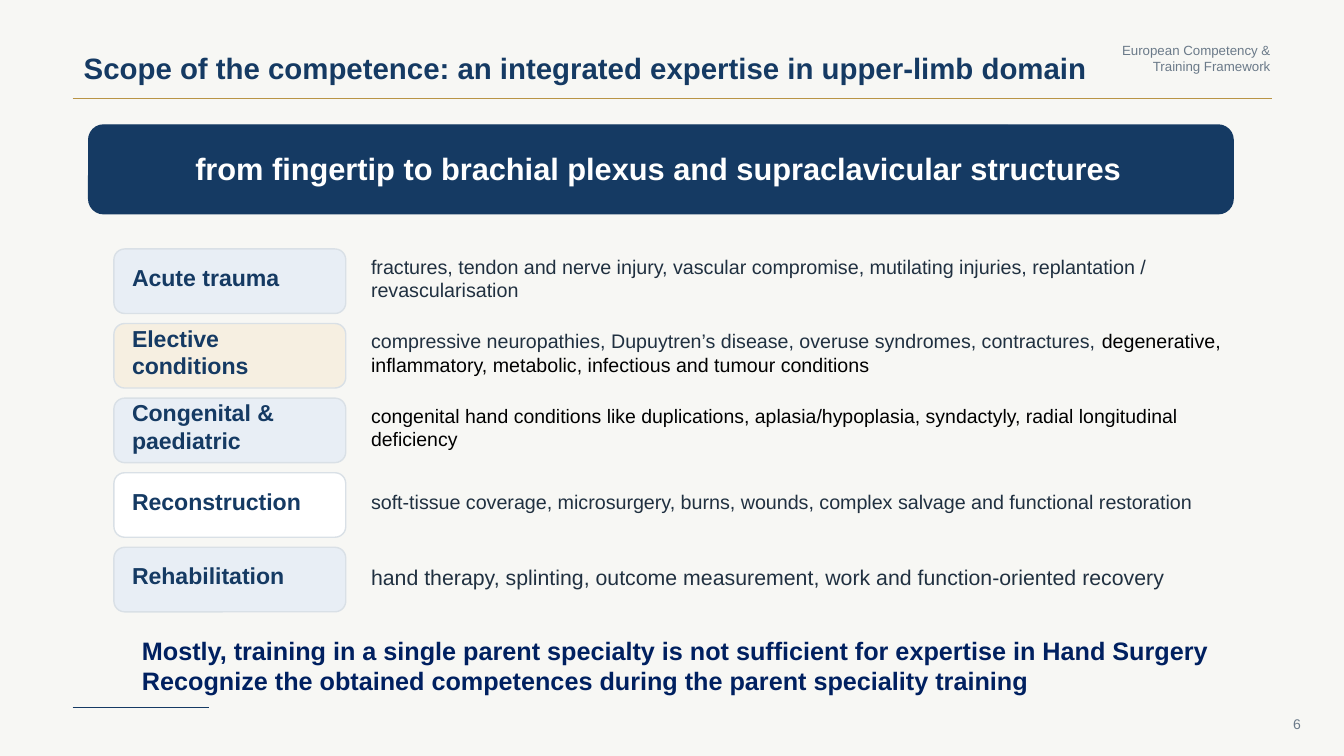
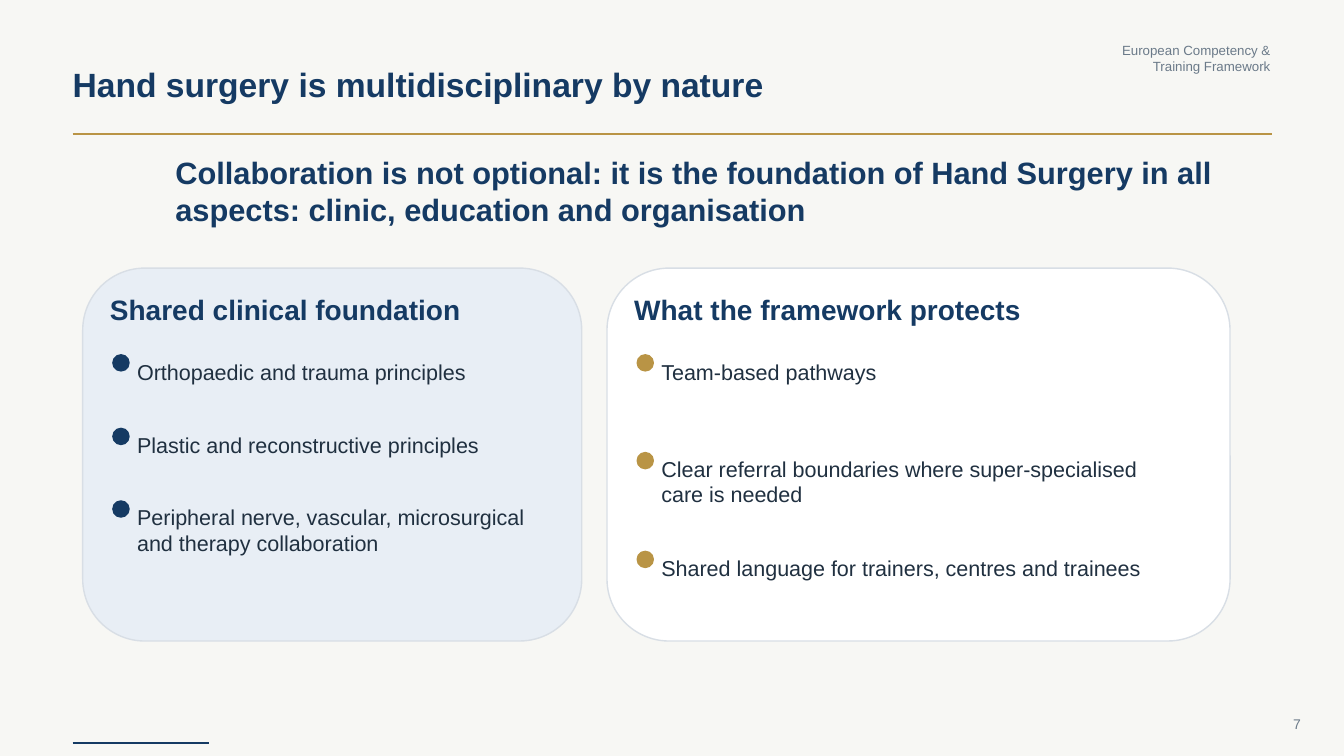
"""Build two slides on the scope and multidisciplinary nature of hand surgery."""
from lxml.etree import SubElement
from pptx import Presentation
from pptx.dml.color import RGBColor
from pptx.enum.shapes import MSO_CONNECTOR, MSO_SHAPE
from pptx.enum.text import MSO_ANCHOR, MSO_AUTO_SIZE, PP_ALIGN
from pptx.oxml.ns import qn
from pptx.util import Pt

PX = 9144
FONT = "Arial"
COLORS = {
    "paper": "F7F7F4",
    "navy": "153A63",
    "deep": "002060",
    "gold": "B99445",
    "gray": "6B7A89",
    "ink": "203040",
    "black": "000000",
    "white": "FFFFFF",
    "blue": "E8EEF5",
    "cream": "F6EFE1",
    "label edge": "D9E0E6",
    "card edge": "D8DEE5",
}
PALETTE = {name: RGBColor.from_string(value) for name, value in COLORS.items()}


def write_text(slide, place, spans, size, bold=False, align=PP_ALIGN.LEFT,
               inset=0, anchor=MSO_ANCHOR.MIDDLE, box=None):
    """Write (text, colour) spans into a new text box or the given box."""
    left, top, width, height = [length * PX for length in place]
    if box is None:
        box = slide.shapes.add_textbox(left, top, width, height)
    box.left, box.top, box.width, box.height = left, top, width, height
    frame = box.text_frame
    frame.word_wrap = True
    frame.auto_size = MSO_AUTO_SIZE.NONE
    frame.vertical_anchor = anchor
    frame.margin_left = frame.margin_right = inset * PX
    frame.margin_top = frame.margin_bottom = inset * PX // 2
    para = frame.paragraphs[0]
    para.alignment = align
    for text, color in spans:
        span = para.add_run()
        span.text = text
        span.font.name = FONT
        span.font.size = Pt(size)
        span.font.bold = bold
        span.font.color.rgb = PALETTE[color]


def draw_shape(slide, kind, place, fill, edge):
    """Draw a filled preset shape with a one-point outline."""
    shape = slide.shapes.add_shape(kind, *[length * PX for length in place])
    shape.shadow.inherit = False
    shape.fill.solid()
    shape.fill.fore_color.rgb = PALETTE[fill]
    shape.line.color.rgb = PALETTE[edge]
    shape.line.width = Pt(1)


deck = Presentation()
deck.slide_width = 1333 * PX
deck.slide_height = 750 * PX
background = deck.slide_master.background.fill
background.solid()
background.fore_color.rgb = PALETTE["paper"]

pages = [
    ("Scope of the competence: an integrated expertise in upper-limb domain",
     (83, 46, 1160, 42), 21, 98, 702, "6"),
    ("Hand surgery is multidisciplinary by nature",
     (72, 62, 890, 42), 24, 133, 737, "7"),
]
for title, place, size, title_rule, footer_rule, number in pages:
    page = deck.slides.add_slide(deck.slide_layouts[5])
    write_text(page, place, [(title, "navy")], size, bold=True, box=page.shapes.title)
    write_text(page, (1085, 49, 175, 18),
               [("European Competency & Training Framework", "gray")], 9.5,
               align=PP_ALIGN.RIGHT)
    for end, y, color in [(1262, title_rule, "gold"), (207, footer_rule, "navy")]:
        rule = page.shapes.add_connector(
            MSO_CONNECTOR.STRAIGHT, 72 * PX, y * PX, end * PX, y * PX)
        rule.line.color.rgb = PALETTE[color]
        rule.line.width = Pt(1)
        SubElement(rule._element.spPr, qn("a:effectLst"))
    write_text(page, (1265, 708, 35, 20), [(number, "gray")], 10,
               align=PP_ALIGN.RIGHT, inset=10)

scope, teamwork = deck.slides

draw_shape(scope, MSO_SHAPE.ROUNDED_RECTANGLE, (88, 124, 1135, 88), "navy", "navy")
write_text(scope, (113, 152, 1080, 30),
           [("from fingertip to brachial plexus and supraclavicular structures", "white")],
           22, bold=True, align=PP_ALIGN.CENTER)

areas = [
    ("Acute trauma", "blue", 835, 14.1,
     [("fractures, tendon and nerve injury, vascular compromise, mutilating injuries, "
       "replantation / revascularisation", "ink")]),
    ("Elective conditions", "cream", 875, 14,
     [("compressive neuropathies, Dupuytren’s disease, overuse syndromes, "
       "contractures, ", "ink"),
      ("degenerative, inflammatory, metabolic, infectious and tumour conditions",
       "black")]),
    ("Congenital & paediatric", "blue", 835, 13.9,
     [("congenital hand conditions like duplications, aplasia/hypoplasia, syndactyly, "
       "radial longitudinal deficiency", "black")]),
    ("Reconstruction", "white", 835, 14.1,
     [("soft-tissue coverage, microsurgery, burns, wounds, complex salvage and "
       "functional restoration", "ink")]),
    ("Rehabilitation", "blue", 835, 15.2,
     [("hand therapy, splinting, outcome measurement, work and function-oriented "
       "recovery", "ink")]),
]
for row, (label, fill, width, size, details) in enumerate(areas):
    top = 247 + 74 * row
    draw_shape(scope, MSO_SHAPE.ROUNDED_RECTANGLE, (113, top, 230, 64), fill, "label edge")
    write_text(scope, (131, top + 17, 190, 22), [(label, "navy")], 16.5, bold=True)
    write_text(scope, (368, top + 8, width, 42), details, size)

write_text(scope, (131, 625, 1090, 71),
           [("Mostly, training in a single parent specialty is not sufficient for "
             "expertise in Hand Surgery Recognize the obtained competences during the "
             "parent speciality training", "deep")],
           18, bold=True, inset=10, anchor=MSO_ANCHOR.TOP)

write_text(teamwork, (174, 167, 1053, 45),
           [("Collaboration is not optional: it is the foundation of Hand Surgery in all "
             "aspects: clinic, education and organisation", "navy")], 22, bold=True)

cards = [
    ("Shared clinical foundation", 82, 495, "blue", "navy", 391, [
        (352, 341, 55, "Orthopaedic and trauma principles"),
        (425, 414, 55, "Plastic and reconstructive principles"),
        (497, 486, 79, "Peripheral nerve, vascular, microsurgical and therapy collaboration"),
    ]),
    ("What the framework protects", 602, 618, "white", "gold", 506, [
        (352, 329, 79, "Team-based pathways"),
        (449, 438, 79, "Clear referral boundaries where super-specialised care is needed"),
        (547, 536, 55, "Shared language for trainers, centres and trainees"),
    ]),
]
for heading, left, width, fill, dot_color, text_width, points in cards:
    draw_shape(teamwork, MSO_SHAPE.ROUNDED_RECTANGLE, (left, 266, width, 370),
               fill, "card edge")
    write_text(teamwork, (left + 27, 292, 416, 30), [(heading, "navy")], 20, bold=True)
    for dot_top, text_top, height, point in points:
        draw_shape(teamwork, MSO_SHAPE.OVAL, (left + 30, dot_top, 16, 16),
                   dot_color, dot_color)
        write_text(teamwork, (left + 54, text_top, text_width, height),
                   [(point, "ink")], 15.4)

deck.save("out.pptx")
